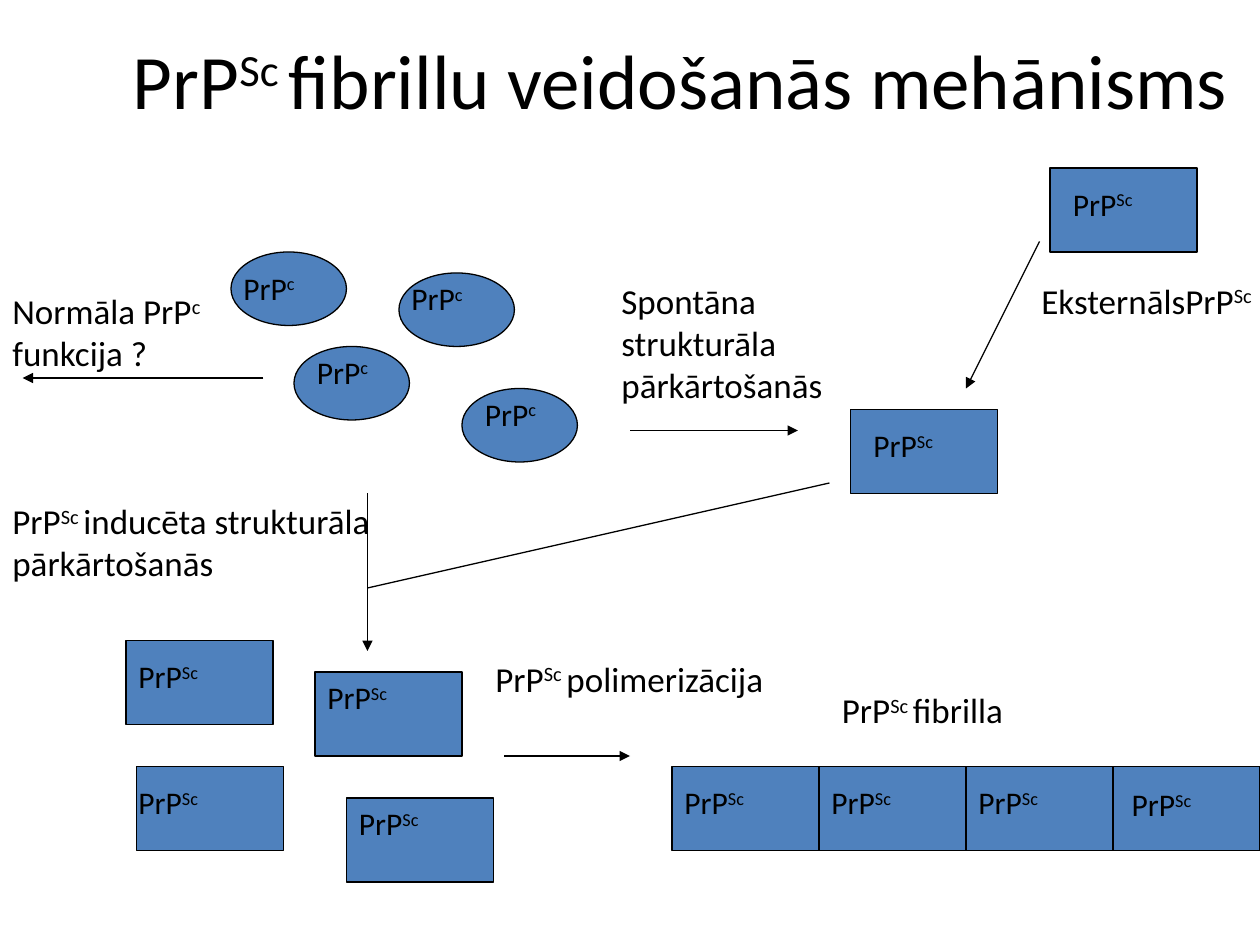
from dataclasses import dataclass

from lxml.etree import SubElement
from pptx import Presentation
from pptx.dml.color import RGBColor
from pptx.enum.shapes import MSO_CONNECTOR, MSO_SHAPE
from pptx.enum.text import MSO_ANCHOR, MSO_AUTO_SIZE, PP_ALIGN
from pptx.oxml.ns import qn
from pptx.slide import Slide
from pptx.text.text import TextFrame
from pptx.util import Pt

BLACK = RGBColor(0x00, 0x00, 0x00)
BLUE = RGBColor(0x4F, 0x81, 0xBD)
FONT = "Calibri"
LINE_WIDTH = 0.75
NORMAL, SCRAPIE = "PrP|c", "PrP|Sc"


@dataclass
class Protein:
    left: float
    top: float
    label_dx: float = 0
    label_dy: float = 0


@dataclass
class Caption:
    text: str
    left: float
    top: float
    width: float
    height: float


@dataclass
class Path:
    start: tuple[float, float]
    end: tuple[float, float]
    arrow: bool = True


NORMAL_PROTEINS = [
    Protein(132, 144, 0, 6),
    Protein(168, 198, 6, 0),
    Protein(228, 156),
    Protein(264, 222, 6, 0),
]
FIBRIL = [Protein(384 + 84 * i, 438, 0, 6) for i in range(3)]
SCRAPIE_PROTEINS = [
    Protein(486, 234, 6, 6),
    *FIBRIL,
    Protein(636, 438, 3.6, 7.2),
    Protein(78, 438, -6, 6),
    Protein(198, 456),
    Protein(180, 384),
    Protein(72, 366, 0, 6),
    Protein(600, 96, 6, 6),
]
CAPTIONS = [
    Caption("Spontāna strukturāla pārkārtošanās", 348, 156, 150, 80),
    Caption("EksternālsPrP|Sc", 588, 156, 150, 31),
    Caption("PrP|Sc |inducēta strukturāla pārkārtošanās", 0, 282, 246, 55.5),
    Caption("PrP|Sc |polimerizācija", 276, 372, 168, 55.5),
    Caption("PrP|Sc |fibrilla", 474, 390, 192, 31),
    Caption("Normāla PrP|c |funkcija ?", 0, 162, 124.5, 55.5),
]
PATHS = [
    Path((360, 246), (456, 246)),
    Path((210, 282), (210, 372)),
    Path((288, 432), (360, 432)),
    Path((474, 276), (210, 336), arrow=False),
    Path((594, 138), (552, 222)),
    Path((150.5, 216), (13, 216)),
]


def write(frame: TextFrame, text: str, size: float) -> None:
    """Write text in which every second part between bars is superscript."""
    for index, part in enumerate(text.split("|")):
        run = frame.paragraphs[0].add_run()
        run.text = part
        font_format = {"name": FONT, "size": Pt(size)}
        for attribute, value in font_format.items():
            setattr(run.font, attribute, value)
        run.font.color.rgb = BLACK
        if index % 2:
            run.font._element.set("baseline", "30000")


def add_caption(slide: Slide, caption: Caption, size: float = 20) -> None:
    box = slide.shapes.add_textbox(
        Pt(caption.left), Pt(caption.top), Pt(caption.width), Pt(caption.height)
    )
    frame_format = {"word_wrap": True, "auto_size": MSO_AUTO_SIZE.SHAPE_TO_FIT_TEXT}
    for attribute, value in frame_format.items():
        setattr(box.text_frame, attribute, value)
    write(box.text_frame, caption.text, size)


def add_protein(slide: Slide, protein: Protein, outline: MSO_SHAPE,
                width: float, height: float, label: str) -> None:
    body = slide.shapes.add_shape(
        outline, Pt(protein.left), Pt(protein.top), Pt(width), Pt(height)
    )
    body.shadow.inherit = False
    body.fill.solid()
    body.fill.fore_color.rgb = BLUE
    body.line.color.rgb = BLACK
    body.line.width = Pt(LINE_WIDTH)
    left, top = protein.left + protein.label_dx, protein.top + protein.label_dy
    add_caption(slide, Caption(label, left, top, 90, 36), size=18)


def add_path(slide: Slide, path: Path) -> None:
    ends = [Pt(value) for value in (*path.start, *path.end)]
    connector = slide.shapes.add_connector(MSO_CONNECTOR.STRAIGHT, *ends)
    connector.line.color.rgb = BLACK
    connector.line.width = Pt(LINE_WIDTH)
    if path.arrow:
        SubElement(connector.line._get_or_add_ln(), qn("a:tailEnd"), type="triangle")
    SubElement(connector._element.spPr, qn("a:effectLst"))


def add_title(slide: Slide) -> None:
    title = slide.shapes.title
    place = {"left": Pt(48), "top": Pt(0), "width": Pt(672), "height": Pt(90)}
    for attribute, value in place.items():
        setattr(title, attribute, value)
    title.text_frame.vertical_anchor = MSO_ANCHOR.MIDDLE
    title.text_frame.auto_size = MSO_AUTO_SIZE.NONE
    title.text_frame.paragraphs[0].alignment = PP_ALIGN.CENTER
    write(title.text_frame, " PrP|Sc |fibrillu veidošanās mehānisms", 44)


def main() -> None:
    deck = Presentation()
    deck.slide_width, deck.slide_height = Pt(720), Pt(540)
    slide = deck.slides.add_slide(deck.slide_layouts[5])
    add_title(slide)
    for protein in NORMAL_PROTEINS:
        add_protein(slide, protein, MSO_SHAPE.OVAL, 66, 42, NORMAL)
    for protein in SCRAPIE_PROTEINS:
        add_protein(slide, protein, MSO_SHAPE.RECTANGLE, 84, 48, SCRAPIE)
    for path in PATHS:
        add_path(slide, path)
    for caption in CAPTIONS:
        add_caption(slide, caption)
    deck.save("out.pptx")


if __name__ == "__main__":
    main()
